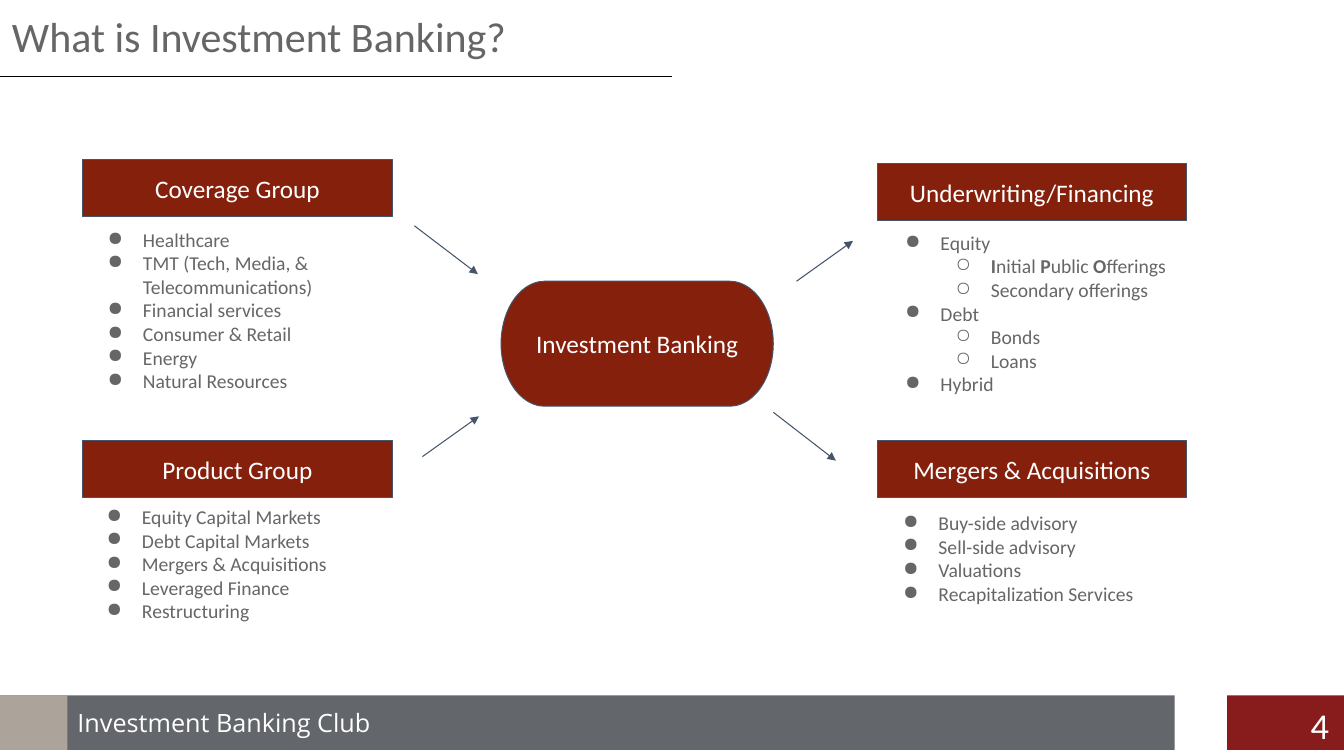
from pptx import Presentation
from pptx.dml.color import RGBColor
from pptx.enum.shapes import MSO_CONNECTOR as Link, MSO_SHAPE as Shape
from pptx.enum.text import MSO_ANCHOR as Anchor, PP_ALIGN as Align
from pptx.oxml.ns import qn
from pptx.util import Inches, Pt
from lxml.etree import SubElement

GREY, WHITE, RED, NAVY = "666666", "FFFFFF", "85200C", "44546A"


def hue(code):
    return RGBColor.from_string(code)


def write(shape, lines, size, color, align=Align.LEFT, face="Calibri", pad=0.1, bullets=False):
    frame = shape.text_frame
    frame.word_wrap = True
    frame.margin_left = frame.margin_right = Inches(0.1)
    frame.margin_top = frame.margin_bottom = Inches(pad)
    for i, line in enumerate(lines):
        para = frame.add_paragraph() if i else frame.paragraphs[0]
        para.alignment = align
        if bullets:
            level = int(line.startswith(">"))
            line = line.lstrip(">")
            para.level = level
            props = para._p.get_or_add_pPr()
            props.set("marL", str(Inches(0.5 + 0.5 * level)))
            props.set("indent", str(Inches(-0.35)))
            tint = SubElement(props, qn("a:buClr"))
            SubElement(tint, qn("a:srgbClr")).set("val", color)
            SubElement(props, qn("a:buChar")).set("char", "●○"[level])
        para.font.size = Pt(size)
        para.font.name = face
        para.font.color.rgb = hue(color)
        for j, part in enumerate(line.split("*")):
            if part:
                run = para.add_run()
                run.text = part
                if j % 2:
                    run.font.bold = True


deck = Presentation()
deck.slide_width, deck.slide_height = Inches(13.33), Inches(7.5)
slide = deck.slides.add_slide(deck.slide_layouts[6])
shapes = slide.shapes

for left, width, fill in [(0, 11.65, "63666A"), (12.17, 1.16, "881C1C"), (0, 0.67, "ACA39A")]:
    bar = shapes.add_shape(Shape.RECTANGLE, Inches(left), Inches(6.9), Inches(width), Inches(0.54))
    bar.shadow.inherit = False
    bar.fill.solid()
    bar.fill.fore_color.rgb = hue(fill)
    bar.line.fill.background()

labels = [
    ("What is Investment Banking?", 0.02, 0, 10.29, 0.71, 30, GREY, Align.LEFT, "Calibri", 0.1),
    ("Investment Banking Club", 0.67, 6.97, 10.98, 0.4, 18, WHITE, Align.LEFT, "Open Sans", 0.05),
    ("4", 12.48, 6.93, 0.8, 0.57, 26, WHITE, Align.RIGHT, "Calibri", 0.05),
]
for text, left, top, width, height, *style in labels:
    box = shapes.add_textbox(Inches(left), Inches(top), Inches(width), Inches(height))
    write(box, [text], *style)

nodes = [
    ("Coverage Group", Shape.RECTANGLE, 0.82, 1.58, 3.07, 0.57),
    ("Product Group", Shape.RECTANGLE, 0.82, 4.37, 3.07, 0.57),
    ("Underwriting/Financing", Shape.RECTANGLE, 8.7, 1.62, 3.07, 0.57),
    ("Mergers & Acquisitions", Shape.RECTANGLE, 8.7, 4.37, 3.07, 0.57),
    ("Investment Banking", Shape.FLOWCHART_TERMINATOR, 4.97, 2.79, 2.7, 1.24),
]
for text, kind, left, top, width, height in nodes:
    node = shapes.add_shape(kind, Inches(left), Inches(top), Inches(width), Inches(height))
    node.shadow.inherit = False
    node.fill.solid()
    node.fill.fore_color.rgb = hue(RED)
    node.line.color.rgb = hue(NAVY)
    node.line.width = Pt(0.75)
    node.text_frame.vertical_anchor = Anchor.MIDDLE
    write(node, [text], 18, WHITE, Align.CENTER)

lists = [
    (0.82, 2.16, 1.85, ["Healthcare", "TMT (Tech, Media, & Telecommunications)", "Financial services",
                        "Consumer & Retail", "Energy", "Natural Resources"]),
    (0.81, 4.91, 1.38, ["Equity Capital Markets", "Debt Capital Markets", "Mergers & Acquisitions",
                        "Leveraged Finance", "Restructuring"]),
    (8.73, 2.19, 1.85, ["Equity", ">*I*nitial *P*ublic *O*fferings", ">Secondary offerings",
                        "Debt", ">Bonds", ">Loans", "Hybrid"]),
    (8.71, 4.97, 1.14, ["Buy-side advisory", "Sell-side advisory", "Valuations",
                        "Recapitalization Services"]),
]
for left, top, height, items in lists:
    box = shapes.add_textbox(Inches(left), Inches(top), Inches(3.07), Inches(height))
    write(box, items, 14, GREY, bullets=True)

lines = [
    (0, 0.76, 6.67, 0.76, "000000", False),
    (4.11, 2.24, 4.74, 2.72, NAVY, True),
    (4.19, 4.53, 4.75, 4.13, NAVY, True),
    (7.67, 4.09, 8.29, 4.57, NAVY, True),
    (7.9, 2.79, 8.46, 2.39, NAVY, True),
]
for *ends, color, arrow in lines:
    line = shapes.add_connector(Link.STRAIGHT, *[Inches(end) for end in ends])
    line.line.color.rgb = hue(color)
    line.line.width = Pt(0.75)
    if arrow:
        SubElement(line.line._get_or_add_ln(), qn("a:tailEnd")).set("type", "triangle")
    SubElement(line._element.spPr, qn("a:effectLst"))

deck.save("out.pptx")
